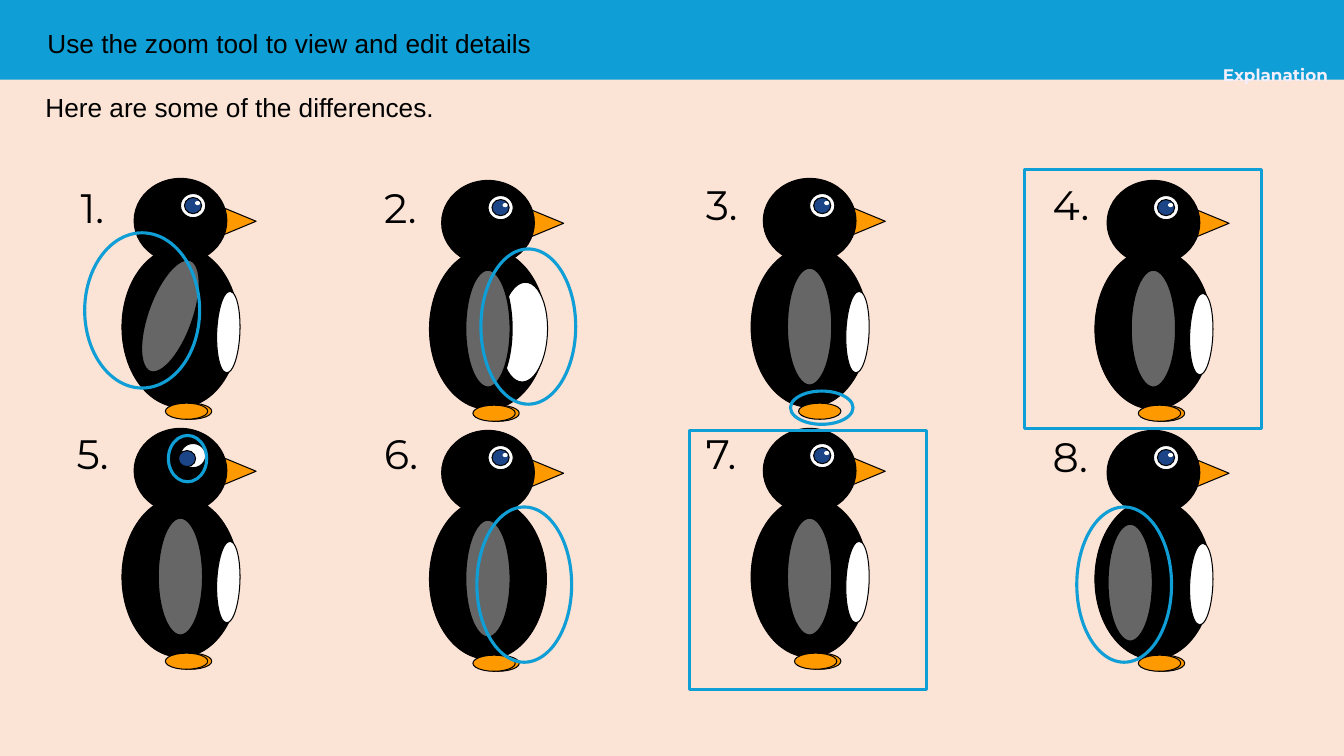
import dataclasses

import pptx
import pptx.dml.color
import pptx.enum.shapes
import pptx.enum.text
import pptx.util

SHAPE = pptx.enum.shapes.MSO_SHAPE
ALIGN = pptx.enum.text.PP_ALIGN
ANCHOR = pptx.enum.text.MSO_ANCHOR


@dataclasses.dataclass(frozen=True)
class Theme:
    backdrop: str = "FBE3D6"
    accent: str = "0F9ED5"
    label: str = "F3EEFB"
    black: str = "000000"
    white: str = "FFFFFF"
    grey: str = "666666"
    orange: str = "FF9900"
    navy: str = "1C4587"
    text_font: str = "Arial"
    display_font: str = "Montserrat"
    text_size: float = 18.7
    number_size: float = 29.3
    label_size: float = 12
    thin: float = 0.75
    thick: float = 2.25


def color(code):
    return pptx.dml.color.RGBColor.from_string(code)


class Board:
    """Draws on one slide, measured in columns and rows of a 13.33 by 7.5 grid."""

    COLUMNS, ROWS = 13.33, 7.5

    def __init__(self, deck, theme):
        self.theme = theme
        self.column = deck.slide_width / self.COLUMNS
        self.row = deck.slide_height / self.ROWS
        self.page = deck.slides.add_slide(deck.slide_layouts[5])
        self.page.background.fill.solid()
        self.page.background.fill.fore_color.rgb = color(theme.backdrop)

    def place(self, left, top, width, height):
        return (round(left * self.column), round(top * self.row),
                round(width * self.column), round(height * self.row))

    def shape(self, kind, area, fill=None, line=None, weight=None, turn=0, parent=None):
        shapes = (parent or self.page).shapes
        item = shapes.add_shape(kind, *self.place(*area))
        item.shadow.inherit = False
        item.rotation = turn
        if fill:
            item.fill.solid()
            item.fill.fore_color.rgb = color(fill)
        else:
            item.fill.background()
        if line:
            item.line.color.rgb = color(line)
            item.line.width = pptx.util.Pt(weight or self.theme.thin)
        else:
            item.line.fill.background()
        return item

    def set_text(self, box, words, size, font, ink, bold=False,
                 align=ALIGN.LEFT, anchor=ANCHOR.MIDDLE, wrap=True):
        frame = box.text_frame
        frame.margin_left = frame.margin_right = 0
        frame.margin_top = frame.margin_bottom = 0
        frame.auto_size = pptx.enum.text.MSO_AUTO_SIZE.NONE
        frame.word_wrap = wrap
        frame.vertical_anchor = anchor
        para = frame.paragraphs[0]
        para.text = words
        para.alignment = align
        para.font.size = pptx.util.Pt(size)
        para.font.name = font
        para.font.bold = bold
        para.font.color.rgb = color(ink)

    def text(self, area, words, *style, **options):
        box = self.page.shapes.add_textbox(*self.place(*area))
        self.set_text(box, words, *style, **options)

    def title(self, area, words, behind):
        box = self.page.shapes.title
        box.left, box.top, box.width, box.height = self.place(*area)
        behind.element.addnext(box.element)
        theme = self.theme
        self.set_text(box, words, theme.text_size, theme.text_font, theme.black)

    def penguin(self, penguin):
        theme = self.theme
        group = self.page.shapes.add_group_shape()
        group.name = f"Penguin {penguin.number}"

        def part(area, fill, kind=SHAPE.OVAL, line=theme.black, weight=None, turn=0):
            self.shape(kind, penguin.offset(area), fill, line, weight, turn, group)

        part((0, 0.68, 1.16, 1.59), theme.black)
        part((1.01, 0.25, 0.29, 0.35), theme.orange, SHAPE.ISOSCELES_TRIANGLE, turn=90)
        part((0.12, 0, 0.92, 0.84), theme.black)
        part((0.58, 0.15, 0.25, 0.24), theme.white)
        part((*penguin.pupil, 0.17, 0.16), theme.navy)
        part((0.73, 0.23, 0.04, 0.03), theme.white, line=theme.white)
        if penguin.flipper:
            part(penguin.flipper, theme.white, turn=2.4)
        for left in penguin.feet:
            part((left, 2.23, 0.42, 0.16), theme.orange)
        part(penguin.belly, theme.grey, weight=theme.thick, turn=penguin.lean)
        if penguin.socket:
            part(penguin.socket, None, weight=theme.thick)

    def number(self, penguin):
        self.text(penguin.offset((*penguin.number_at, 0.42, 0.4)), f"{penguin.number}.",
                  self.theme.number_size, self.theme.display_font, self.theme.black,
                  wrap=False)

    def marker(self, penguin):
        self.shape(penguin.mark_kind, penguin.offset(penguin.mark),
                   line=self.theme.accent, weight=self.theme.thick)


@dataclasses.dataclass
class Penguin:
    """One bird; every area is measured from its left side and the top of its head."""
    number: int
    mark: tuple
    number_at: tuple = (-0.45, 0.05)
    mark_kind: object = SHAPE.OVAL
    belly: tuple = (0.35, 0.88, 0.46, 1.18)
    lean: float = 0
    pupil: tuple = (0.62, 0.19)
    socket: tuple = None
    flipper: tuple = (0.94, 1.12, 0.23, 0.81)
    feet: tuple = (0.47, 0.43)

    def offset(self, area):
        row, column = divmod(self.number - 1, 4)
        left = (1.21, 4.26, 7.45, 10.86)[column]
        top = 1.77 + 2.48 * row + 0.02 * (column % 2)
        return (left + area[0], top + area[1], *area[2:])


PENGUINS = [
    Penguin(1, (-0.37, 0.54, 1.14, 1.54), number_at=(-0.41, 0.08),
            belly=(0.25, 0.77, 0.46, 1.19), lean=19.8),
    Penguin(2, (0.51, 0.68, 0.94, 1.54), number_at=(-0.45, 0.06),
            flipper=(0.7, 1.01, 0.47, 0.99)),
    Penguin(3, (0.39, 2.11, 0.62, 0.33), feet=(0.47,)),
    Penguin(4, (-0.7, -0.11, 2.35, 2.57), number_at=(-0.42, 0.03), mark_kind=SHAPE.RECTANGLE),
    Penguin(5, (0.46, 0.07, 0.38, 0.46), pupil=(0.56, 0.22), socket=(0.54, 0.1, 0.35, 0.4)),
    Penguin(6, (0.47, 0.76, 0.94, 1.54), number_at=(-0.45, 0.03), flipper=None),
    Penguin(7, (-0.61, 0.02, 2.35, 2.57), mark_kind=SHAPE.RECTANGLE),
    Penguin(8, (-0.18, 0.76, 0.94, 1.54), number_at=(-0.42, 0.05),
            belly=(0.12, 0.92, 0.46, 1.18)),
]


def main():
    deck = pptx.Presentation()
    deck.slide_width = pptx.util.Inches(13.33)
    deck.slide_height = pptx.util.Inches(7.5)
    theme = Theme()
    board = Board(deck, theme)

    # Banner, title and introduction
    banner = board.shape(SHAPE.RECTANGLE, (0, 0, board.COLUMNS, 0.79), theme.accent)
    board.title((0.47, 0.22, 10.4, 0.42), "Use the zoom tool to view and edit details", banner)
    board.text((11.97, 0.64, 1.36, 0.2), "Explanation", theme.label_size,
               theme.display_font, theme.label, bold=True,
               align=ALIGN.CENTER, anchor=ANCHOR.TOP)
    board.text((0.45, 0.91, 12.01, 0.49), "Here are some of the differences.",
               theme.text_size, theme.text_font, theme.black, anchor=ANCHOR.TOP)

    # Penguins, then their numbers, then the markers on top
    for draw in (board.penguin, board.number, board.marker):
        for penguin in PENGUINS:
            draw(penguin)

    deck.save("out.pptx")


if __name__ == "__main__":
    main()
